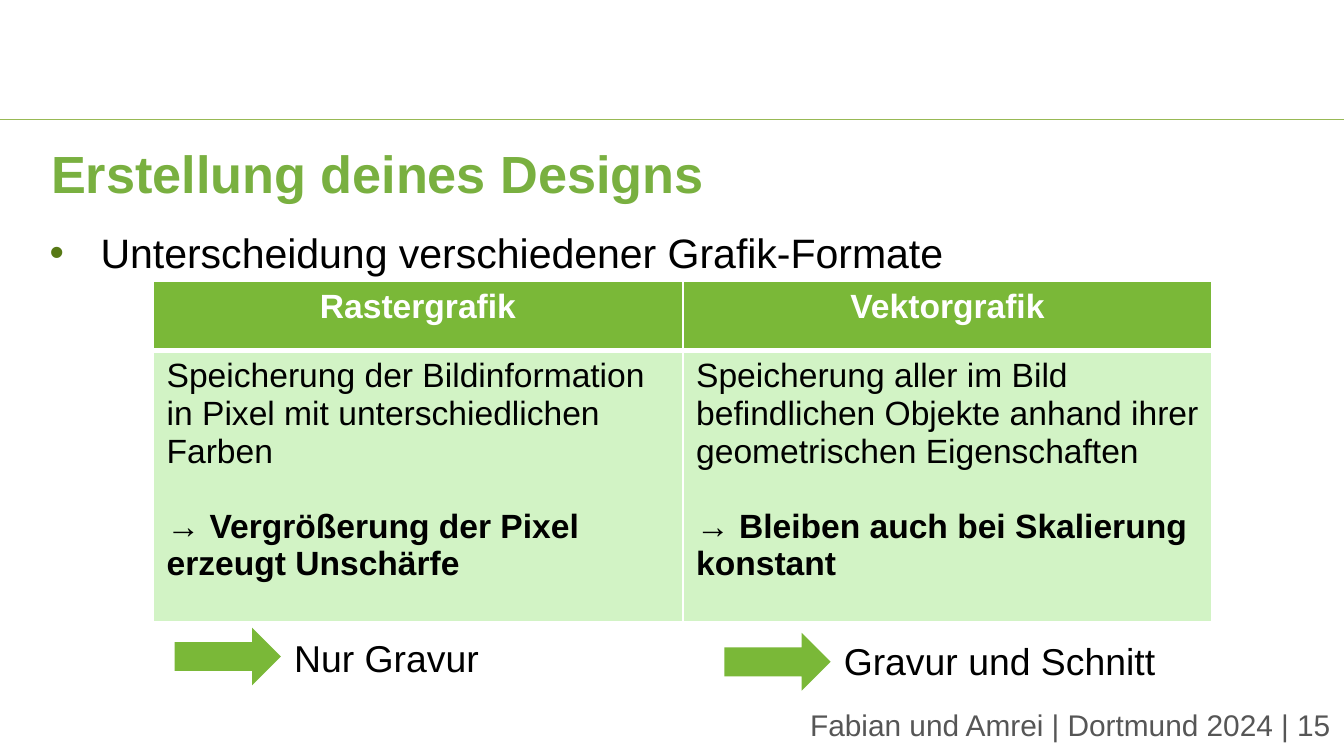
from pptx import Presentation
from pptx.dml.color import RGBColor
from pptx.enum.shapes import MSO_CONNECTOR as Link, MSO_SHAPE as Shape
from pptx.enum.text import MSO_ANCHOR as Anchor, MSO_AUTO_SIZE as Fit, PP_ALIGN as Align
from pptx.oxml.ns import qn
from pptx.util import Inches, Pt
from lxml.etree import SubElement as Sub

WHITE = RGBColor(0xFF, 0xFF, 0xFF)
BLACK = RGBColor(0, 0, 0)
GREEN = RGBColor(0x7A, 0xB8, 0x38)
PALE = RGBColor(0xD2, 0xF3, 0xC5)
TITLE = RGBColor(0x79, 0xB0, 0x40)
RULE = RGBColor(0x98, 0xB9, 0x55)
GREY = RGBColor(0x56, 0x56, 0x56)
DOT = RGBColor(0x57, 0x79, 0x15)


class Deck:
    font = "Arial"

    def __init__(self):
        self.prs = Presentation()
        self.prs.slide_width = Inches(10)
        self.prs.slide_height = Inches(10) * 9 // 16
        self.slide = self.prs.slides.add_slide(self.prs.slide_layouts[5])
        self.shapes = self.slide.shapes

    def style(self, para, size, color, bold=False, align=Align.LEFT):
        para.alignment = align
        for run in para.runs:
            font = run.font
            font.name, font.size, font.bold = self.font, Pt(size), bold
            font.color.rgb = color

    def fill(self, frame, text, size, color, **look):
        frame.word_wrap = True
        frame.text = text
        para = frame.paragraphs[0]
        self.style(para, size, color, **look)
        return para

    def title(self, text, box):
        head = self.shapes.title
        head.left, head.top, head.width, head.height = map(Inches, box)
        frame = head.text_frame
        frame.auto_size = Fit.NONE
        frame.vertical_anchor = Anchor.TOP
        self.fill(frame, text, 28, TITLE, bold=True)

    def text(self, text, box, size, color=BLACK, anchor=Anchor.TOP, **look):
        frame = self.shapes.add_textbox(*map(Inches, box)).text_frame
        frame.vertical_anchor = anchor
        return self.fill(frame, text, size, color, **look)

    def bullet(self, text, box, size):
        para = self.text(text, box, size)
        para.line_spacing = 1.5
        props = para._p.get_or_add_pPr()
        props.set("marL", str(Inches(0.38)))
        props.set("indent", str(-Inches(0.38)))
        Sub(Sub(props, qn("a:buClr")), qn("a:srgbClr"), val=str(DOT))
        Sub(props, qn("a:buFont"), typeface=self.font)
        Sub(props, qn("a:buChar"), char="•")

    def line(self, start, end, color, width):
        rule = self.shapes.add_connector(Link.STRAIGHT, *map(Inches, start + end))
        rule.line.color.rgb, rule.line.width = color, Pt(width)
        Sub(rule._element.spPr, qn("a:effectLst"))

    def arrow(self, box):
        arrow = self.shapes.add_shape(Shape.RIGHT_ARROW, *map(Inches, box))
        arrow.shadow.inherit = False
        arrow.fill.solid()
        arrow.fill.fore_color.rgb = GREEN
        arrow.line.fill.background()

    def border(self, cell, **widths):
        props = cell._tc.get_or_add_tcPr()
        for side in "LRTB":
            edge = Sub(props, qn("a:ln" + side), w=str(Pt(widths.get(side, 1))))
            Sub(Sub(edge, qn("a:solidFill")), qn("a:srgbClr"), val=str(WHITE))

    def paint(self, cell, color):
        cell.fill.solid()
        cell.fill.fore_color.rgb = color

    def table(self, cols, box, rows):
        table = self.shapes.add_table(2, len(cols), *map(Inches, box)).table
        for row, high in zip(table.rows, rows):
            row.height = Inches(high)
        for i, (name, fact, result) in enumerate(cols):
            head, body = table.cell(0, i), table.cell(1, i)
            self.border(head, B=3)
            self.border(body)
            self.paint(head, GREEN)
            self.paint(body, PALE)
            body.margin_bottom = 0
            self.fill(head.text_frame, name, 18, WHITE, bold=True, align=Align.CENTER)
            self.fill(body.text_frame, fact, 18, BLACK)
            para = body.text_frame.add_paragraph()
            para.text = result
            para.space_before = Pt(20)
            self.style(para, 18, BLACK, bold=True)


def main():
    deck = Deck()

    # Header rule and footer
    deck.line((0, 0.89), (10, 0.89), RULE, 0.75)
    deck.text("Fabian und Amrei | Dortmund 2024 | 15", (4.74, 5.17, 5.26, 0.44),
              16, GREY, Anchor.MIDDLE, align=Align.RIGHT)

    # Title and topic
    deck.title("Erstellung deines Designs", (0.28, 1, 9.45, 0.55))
    deck.bullet("Unterscheidung verschiedener Grafik-Formate",
                (0.27, 1.46, 9.45, 0.54), 22)

    # Comparison of formats
    deck.table([
        ("Rastergrafik",
         "Speicherung der Bildinformation in Pixel mit unterschiedlichen Farben",
         "→ Vergrößerung der Pixel erzeugt Unschärfe"),
        ("Vektorgrafik",
         "Speicherung aller im Bild befindlichen Objekte anhand ihrer "
         "geometrischen Eigenschaften",
         "→ Bleiben auch bei Skalierung konstant"),
    ], (1.14, 2.09, 7.88, 2.54), (0.52, 2.02))

    # What each format is good for
    for use, left, top, label, wide in (
        ("Nur Gravur", 1.3, 4.67, 4.68, 1.73),
        ("Gravur und Schnitt", 5.39, 4.71, 4.7, 2.76),
    ):
        deck.arrow((left, top, 0.79, 0.43))
        deck.text(use, (left + 0.79, label, wide, 0.44), 20)

    deck.prs.save("out.pptx")


if __name__ == "__main__":
    main()
